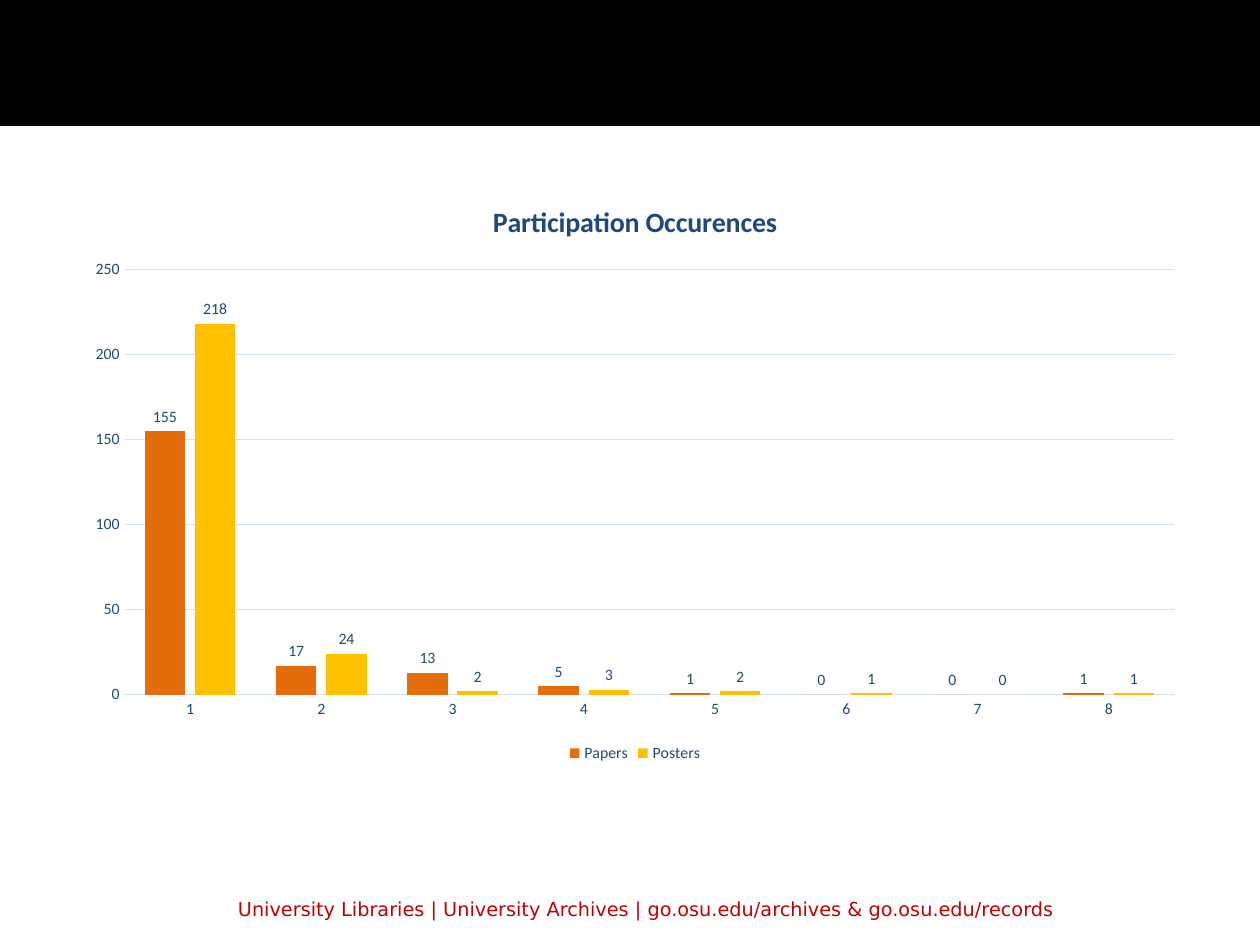
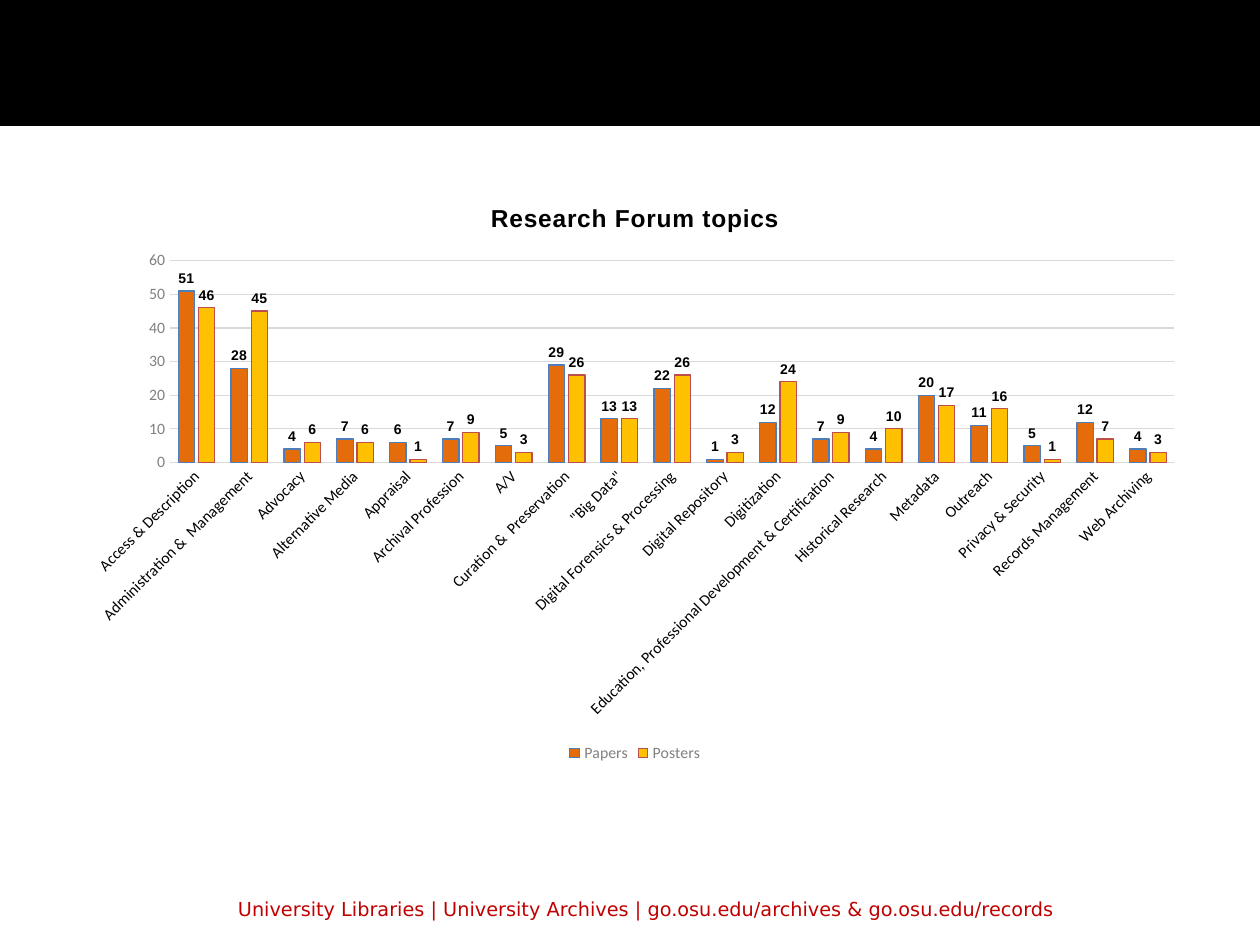
"""Build two slides with column charts on forum papers and posters."""
import dataclasses

import pptx
import pptx.chart.data
import pptx.dml.color
import pptx.enum.chart
import pptx.enum.shapes
import pptx.enum.text
import pptx.util

FOOTER = "University Libraries | University Archives | go.osu.edu/archives & go.osu.edu/records"
NAMES = ("Papers", "Posters")

COUNTS = [
    ("1", 155, 218),
    ("2", 17, 24),
    ("3", 13, 2),
    ("4", 5, 3),
    ("5", 1, 2),
    ("6", 0, 1),
    ("7", 0, 0),
    ("8", 1, 1),
]

TOPICS = [
    ("Access & Description", 51, 46),
    ("Administration &  Management", 28, 45),
    ("Advocacy", 4, 6),
    ("Alternative Media", 7, 6),
    ("Appraisal", 6, 1),
    ("Archival Profession", 7, 9),
    ("A/V", 5, 3),
    ("Curation &  Preservation", 29, 26),
    ('"Big Data"', 13, 13),
    ("Digital Forensics & Processing", 22, 26),
    ("Digital Repository", 1, 3),
    ("Digitization", 12, 24),
    ("Education, Professional Development & Certification", 7, 9),
    ("Historical Research", 4, 10),
    ("Metadata", 20, 17),
    ("Outreach", 11, 16),
    ("Privacy & Security", 5, 1),
    ("Records Management", 12, 7),
    ("Web Archiving", 4, 3),
]


@dataclasses.dataclass(frozen=True)
class Theme:
    """Colours, fonts and type sizes."""
    band: str = "000000"
    ink: str = "000000"
    navy: str = "1F497D"
    grey: str = "808080"
    red: str = "C00000"
    fills: tuple = ("E46C0A", "FFC000")
    edges: tuple = ("4D7EB9", "BC4E4B")
    body: str = "Calibri"
    sans: str = "Arial"
    foot: str = "DejaVu Sans"
    base: int = 10
    small: int = 9
    tiny: int = 8
    note: int = 11
    rule: float = 0.75


T = Theme()

SLIDES = [
    dict(title="Participation Occurences", rows=COUNTS, top=250, step=50,
         head=(16, T.navy, T.body, True), space=0, cats=T.navy, text=T.navy,
         grid="D4E3F4", label=(T.small, T.navy, T.body, False),
         edges=None, turn=0),
    dict(title="Research Forum topics", rows=TOPICS, top=60, step=10,
         head=(14, T.ink, T.sans, True), space=30, cats=T.ink, text=T.grey,
         grid="D9D9D9", label=(T.tiny, T.ink, T.sans, True),
         edges=T.edges, turn=-45),
]

SCALE = 9144
PAGE = (1000, 750)
BAND = (0, 0, 1000, 100)
FOOT = (75, 707, 876, 29)
CHART = (58, 142, 892, 467)


def px(vals):
    """Turn px lengths into EMU."""
    return [pptx.util.Emu(val * SCALE) for val in vals]


def rgb(code):
    """Return a colour from its hex code."""
    return pptx.dml.color.RGBColor.from_string(code)


def style(font, size, color, face, bold=False):
    """Set the look of a font."""
    font.size = pptx.util.Pt(size)
    font.color.rgb = rgb(color)
    font.name = face
    font.bold = bold


def stroke(line, color):
    """Draw a thin line in one colour."""
    line.color.rgb = rgb(color)
    line.width = pptx.util.Pt(T.rule)


def frame(slide):
    """Add the shared footer and top band."""
    box = slide.shapes.add_textbox(*px(FOOT)).text_frame
    box.word_wrap = True
    para = box.paragraphs[0]
    para.alignment = pptx.enum.text.PP_ALIGN.CENTER
    run = para.add_run()
    run.text = FOOTER
    style(run.font, T.note, T.red, T.foot)
    kind = pptx.enum.shapes.MSO_SHAPE.RECTANGLE
    band = slide.shapes.add_shape(kind, *px(BAND))
    band.shadow.inherit = False
    band.fill.solid()
    band.fill.fore_color.rgb = rgb(T.band)
    band.line.fill.background()


def head(chart, part):
    """Add the chart title."""
    chart.has_title = True
    chart.chart_title.include_in_layout = False
    run = chart.chart_title.text_frame.paragraphs[0].add_run()
    run.text = part["title"]
    style(run.font, *part["head"])
    run._r.get_or_add_rPr().set("spc", str(part["space"]))


def axes(chart, part):
    """Style both axes and the grid."""
    none = pptx.enum.chart.XL_TICK_MARK.NONE
    cat, val = chart.category_axis, chart.value_axis
    for axis, color in ((cat, part["cats"]), (val, part["text"])):
        axis.major_tick_mark = axis.minor_tick_mark = none
        style(axis.tick_labels.font, T.small, color, T.body)
    stroke(cat.format.line, part["grid"])
    if part["turn"]:
        body = cat._element.txPr.bodyPr
        body.set("rot", str(part["turn"] * 60000))
        body.set("vert", "horz")
    val.format.line.fill.background()
    val.has_major_gridlines = True
    stroke(val.major_gridlines.format.line, part["grid"])
    val.minimum_scale = 0
    val.maximum_scale = part["top"]
    val.major_unit = part["step"]


def bars(chart, part):
    """Style the columns and their labels."""
    plot = chart.plots[0]
    plot.gap_width = 100
    plot.overlap = -24
    plot.vary_by_categories = False
    for num, series in enumerate(plot.series):
        look = series.format
        look.fill.solid()
        look.fill.fore_color.rgb = rgb(T.fills[num])
        if part["edges"]:
            stroke(look.line, part["edges"][num])
        else:
            look.line.fill.background()
        series.invert_if_negative = False
        labels = series.data_labels
        labels.show_value = True
        labels.position = pptx.enum.chart.XL_LABEL_POSITION.OUTSIDE_END
        style(labels.font, *part["label"])


def graph(slide, part):
    """Add one column chart with its legend."""
    cats, *cols = zip(*part["rows"])
    data = pptx.chart.data.CategoryChartData(number_format="0")
    data.categories = cats
    for name, vals in zip(NAMES, cols):
        data.add_series(name, vals)
    kind = pptx.enum.chart.XL_CHART_TYPE.COLUMN_CLUSTERED
    chart = slide.shapes.add_chart(kind, *px(CHART), data).chart
    style(chart.font, T.base, T.ink, T.body)
    head(chart, part)
    axes(chart, part)
    bars(chart, part)
    chart.has_legend = True
    chart.legend.position = pptx.enum.chart.XL_LEGEND_POSITION.BOTTOM
    chart.legend.include_in_layout = False
    style(chart.legend.font, T.small, part["text"], T.body)


def main():
    """Build and save the deck."""
    deck = pptx.Presentation()
    deck.slide_width, deck.slide_height = px(PAGE)
    for part in SLIDES:
        slide = deck.slides.add_slide(deck.slide_layouts[6])
        frame(slide)
        graph(slide, part)
    deck.save("out.pptx")


if __name__ == "__main__":
    main()
